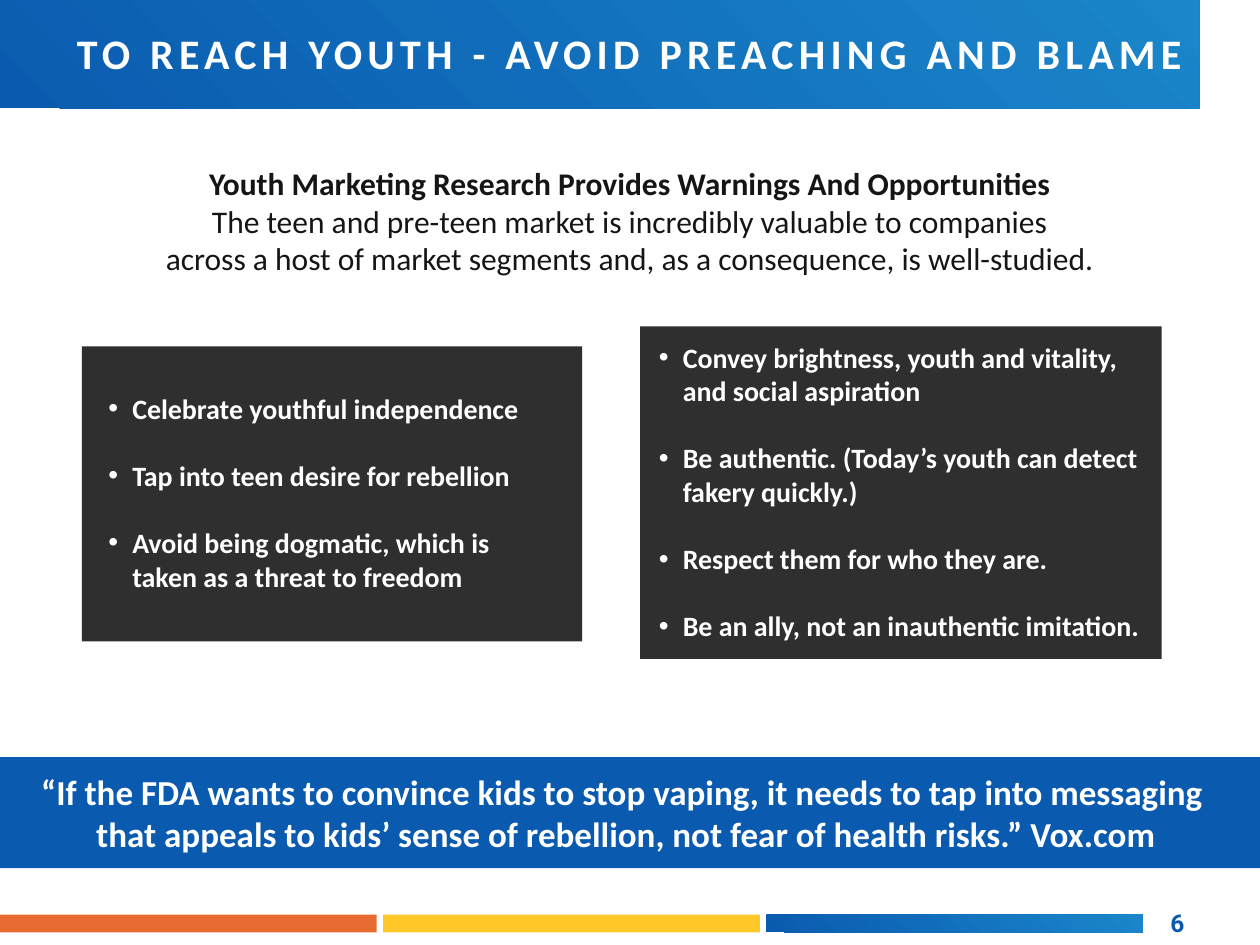
import pptx
import pptx.util
import pptx.dml.color
import pptx.enum.shapes
import pptx.enum.text
import lxml.etree

Inches, Pt = pptx.util.Inches, pptx.util.Pt
RGB = pptx.dml.color.RGBColor
ALIGN = pptx.enum.text.PP_ALIGN
ANCHOR = pptx.enum.text.MSO_ANCHOR

BLUE = RGB(0x0A, 0x5B, 0xAF)
SKY = RGB(0x1B, 0x86, 0xCA)
GOLD = RGB(0xFF, 0xC7, 0x28)
ORANGE = RGB(0xE8, 0x6C, 0x31)
DARK = RGB(0x2F, 0x2F, 0x2F)
INK = RGB(0x16, 0x15, 0x15)
WHITE = RGB(0xFF, 0xFF, 0xFF)
WIDE = 10


def add_rect(slide, box, color, end=None):
    """Flat rectangle, or a diagonal blend when an end colour is given."""
    shape = slide.shapes.add_shape(
        pptx.enum.shapes.MSO_SHAPE.RECTANGLE, *map(Inches, box))
    shape.shadow.inherit = False
    shape.line.fill.background()
    if end is None:
        shape.fill.solid()
        shape.fill.fore_color.rgb = color
    else:
        shape.fill.gradient()
        shape.fill.gradient_angle = 45
        for stop, tint in zip(shape.fill.gradient_stops, (color, end)):
            stop.color.rgb = tint
    return shape


def set_frame(shape, pad=0.06, wrap=True):
    frame = shape.text_frame
    frame.word_wrap = wrap
    frame.vertical_anchor = ANCHOR.MIDDLE
    frame.margin_left = frame.margin_right = Inches(pad)
    frame.margin_top = frame.margin_bottom = Inches(pad)
    return frame


def add_box(slide, box, pad=0.06, wrap=True):
    return set_frame(slide.shapes.add_textbox(*map(Inches, box)), pad, wrap)


def add_lines(par, lines, size, color, bold=False, face="Calibri"):
    """One run for each line, with line breaks between."""
    for i, line in enumerate(lines):
        if i:
            par.add_line_break()
        run = par.add_run()
        run.text = line
        font = run.font
        font.name, font.size, font.bold = face, Pt(size), bold
        font.color.rgb = color
    return run


def add_title(slide, box, text):
    left, top, width, height = box
    add_rect(slide, box, BLUE, SKY)
    frame = add_box(slide, (left + 0.54, top + 0.15, 9.09, 0.54), 0.07, False)
    run = add_lines(frame.paragraphs[0], [text], 24, WHITE, True)
    run.font._element.set("spc", "300")


def add_intro(slide, box, head, lines):
    left, top, width, height = box
    parts = (((left, top, width, 0.4), [head], True),
             ((left, top + 0.29, width, height - 0.29), lines, False))
    for area, words, bold in parts:
        par = add_box(slide, area).paragraphs[0]
        par.alignment = ALIGN.CENTER
        add_lines(par, words, 18, INK, bold)


def add_panel(slide, box, inset, points):
    """Dark panel with a bullet list placed at inset (x, y, w, h)."""
    add_rect(slide, box, DARK)
    x, y, width, height = inset
    frame = add_box(slide, (box[0] + x, box[1] + y, width, height))
    for i, point in enumerate(points):
        par = frame.add_paragraph() if i else frame.paragraphs[0]
        if i:
            par.space_before = Pt(19.2)
        props = par._p.get_or_add_pPr()
        props.set("marL", str(Inches(0.19)))
        props.set("indent", str(-Inches(0.19)))
        font = lxml.etree.SubElement(props, pptx.oxml.ns.qn("a:buFont"))
        font.set("typeface", "Arial")
        mark = lxml.etree.SubElement(props, pptx.oxml.ns.qn("a:buChar"))
        mark.set("char", "•")
        add_lines(par, [point], 16, WHITE, True)


def add_quote(slide, box, lines):
    frame = set_frame(add_rect(slide, box, BLUE))
    frame.margin_left = 0
    par = frame.paragraphs[0]
    par.alignment = ALIGN.CENTER
    add_lines(par, lines, 20, WHITE, True)


def add_foot(slide, box, number):
    left, top, width, height = box
    gap = 0.05
    bar = (width - 2 * gap) / 3
    for i, tints in enumerate(((ORANGE,), (GOLD,), (BLUE, SKY))):
        add_rect(slide, (left + i * (bar + gap), top, bar, height), *tints)
    # Page number
    frame = add_box(slide, (left + width + 0.16, top - 0.11, 0.24, 0.35),
                    wrap=False)
    add_lines(frame.paragraphs[0], [number], 14, BLUE, True, "Roboto")


def main():
    deck = pptx.Presentation()
    deck.slide_width, deck.slide_height = Inches(WIDE), Inches(7.5)
    slide = deck.slides.add_slide(deck.slide_layouts[6])

    add_title(slide, (0, 0, 9.52, 0.86),
              "TO REACH YOUTH - AVOID PREACHING AND BLAME")
    add_intro(slide, (0, 1.25, WIDE, 1.01),
              "Youth Marketing Research Provides Warnings And Opportunities",
              ["The teen and pre-teen market is incredibly valuable to companies",
               "across a host of market segments and, as a consequence, "
               "is well-studied."])
    add_panel(slide, (0.65, 2.75, 3.97, 2.34), (0.15, 0.29, 3.67, 1.73),
              ["Celebrate youthful independence",
               "Tap into teen desire for rebellion",
               "Avoid being dogmatic, which is taken as a threat to freedom"])
    add_panel(slide, (5.08, 2.59, 4.14, 2.64), (0.09, 0.04, 4.06, 2.54),
              ["Convey brightness, youth and vitality, and social aspiration",
               "Be authentic. (Today’s youth can detect fakery quickly.)",
               "Respect them for who they are.",
               "Be an ally, not an inauthentic imitation."])
    add_quote(slide, (0, 6.01, WIDE, 0.88),
              ["“If the FDA wants to convince kids to stop vaping, "
               "it needs to tap into messaging ",
               "that appeals to kids’ sense of rebellion, "
               "not fear of health risks.” Vox.com"])
    add_foot(slide, (0, 7.26, 9.07, 0.14), "6")
    deck.save("out.pptx")


if __name__ == "__main__":
    main()
